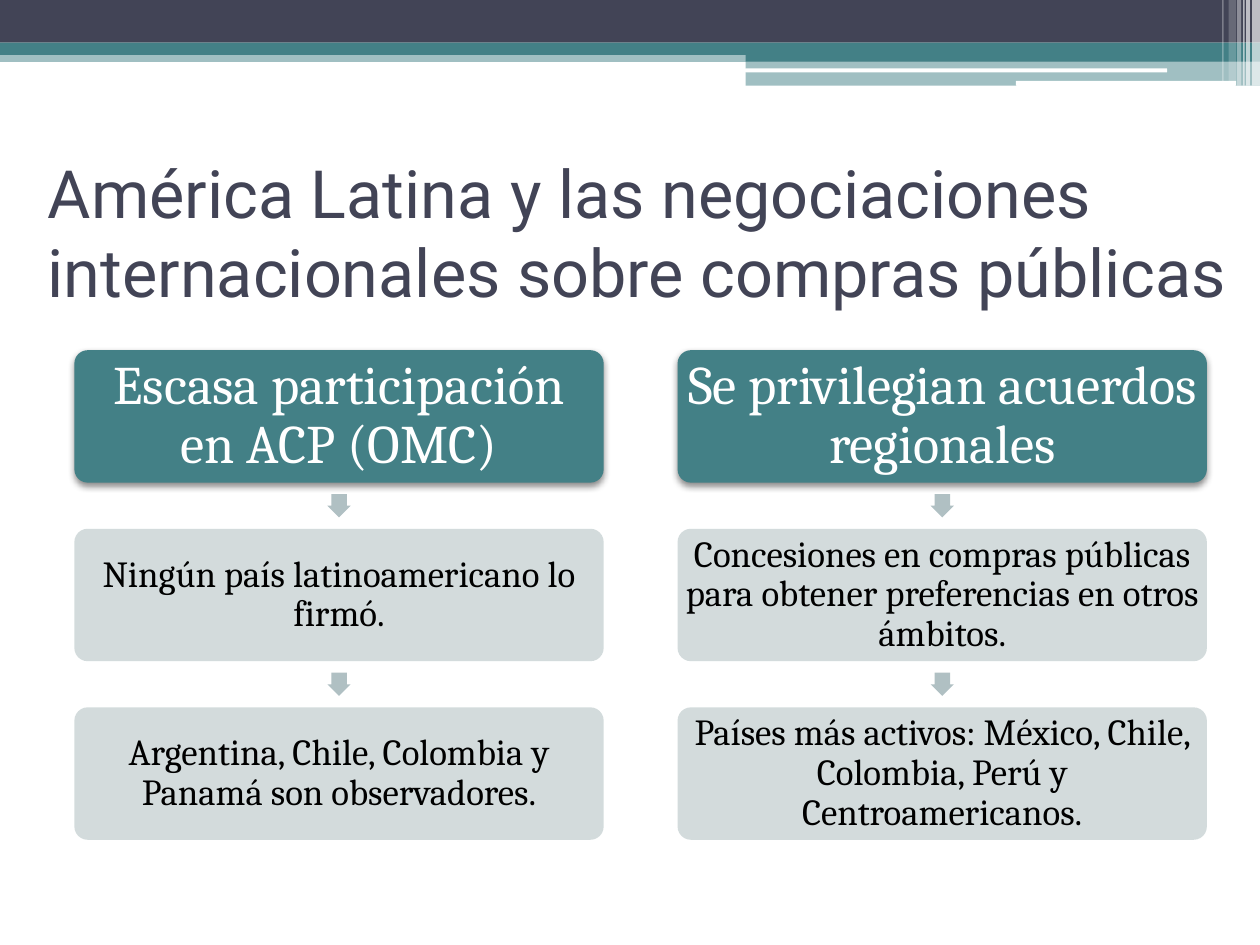
import pptx
import pptx.dml.color
import pptx.enum.shapes
import pptx.enum.text
import pptx.oxml
import pptx.oxml.ns
import pptx.util
from pptx.util import Cm

RGBColor = pptx.dml.color.RGBColor
Shape = pptx.enum.shapes.MSO_SHAPE
Align = pptx.enum.text.PP_ALIGN

NAVY = RGBColor(0x42, 0x44, 0x56)
TEAL = RGBColor(0x43, 0x80, 0x86)
ARROW_GREY = RGBColor(0xB0, 0xC0, 0xC3)
PALE_GREY = RGBColor(0xCF, 0xD8, 0xD9)
WHITE = RGBColor(0xFF, 0xFF, 0xFF)
BLACK = RGBColor(0, 0, 0)

# left, top, width, height in cm, colour, opacity in percent
BANDS = [
    (0, 1.02, 25.4, 0.23, TEAL, 50),
    (0, 0, 25.4, 0.86, NAVY, 100),
    (0, 0.86, 25.4, 0.25, TEAL, 100),
    (15.03, 0.99, 10.37, 0.25, TEAL, 100),
    (15.03, 1.23, 10.37, 0.5, TEAL, 50),
]
HIGHLIGHTS = [(15.02, 1.38, 8.51, 0.08), (20.48, 1.63, 4.44, 0.1)]
# left, width, height in cm, opacity in percent
STRIPES = [
    (25.24, 0.16, 1.73, 65),
    (25.12, 0.08, 1.73, 65),
    (25.06, 0.03, 1.73, 60),
    (24.94, 0.08, 1.73, 40),
    (24.77, 0.15, 1.63, 20),
    (24.64, 0.03, 1.63, 30),
]

COLUMNS = [
    ("Escasa participación en ACP (OMC)",
     "Ningún país latinoamericano lo firmó.",
     "Argentina, Chile, Colombia y Panamá son observadores."),
    ("Se privilegian acuerdos regionales",
     "Concesiones en compras públicas para obtener preferencias en otros ámbitos.",
     "Países más activos: México, Chile, Colombia, Perú y Centroamericanos."),
]
LEFT, TOP = 1.5, 7.06
COLUMN_PITCH, ROW_PITCH = 12.16, 3.6
BOX_WIDTH, BOX_HEIGHT = 10.67, 2.67
ARROW_SIZE = 0.47


def write(frame, text, size, color, font="Cambria", align=Align.CENTER,
          inset=None, line_spacing=None):
    frame.word_wrap = True
    frame.auto_size = pptx.enum.text.MSO_AUTO_SIZE.NONE
    frame.vertical_anchor = pptx.enum.text.MSO_ANCHOR.MIDDLE
    if inset is not None:
        frame.margin_left = frame.margin_right = Cm(inset)
        frame.margin_top = frame.margin_bottom = Cm(inset)
    paragraph = frame.paragraphs[0]
    paragraph.alignment = align
    if line_spacing:
        paragraph.line_spacing = line_spacing
    run = paragraph.add_run()
    run.text = text
    run.font.name = font
    run.font.size = pptx.util.Pt(size)
    run.font.color.rgb = color


class SlideBuilder:
    def __init__(self, slide):
        self.slide = slide

    def title(self, text):
        heading = self.slide.shapes.title
        heading.left, heading.top = Cm(0.71), Cm(3.18)
        heading.width, heading.height = Cm(24.69), Cm(2.97)
        write(heading.text_frame, text, 38, NAVY, font="Roboto", align=Align.LEFT)

    def block(self, left, top, width, height, color, opacity=100,
              kind=Shape.RECTANGLE, adjustments=()):
        block = self.slide.shapes.add_shape(
            kind, Cm(left), Cm(top), Cm(width), Cm(height))
        block.shadow.inherit = False
        block.line.fill.background()
        block.fill.solid()
        block.fill.fore_color.rgb = color
        if opacity < 100:
            tint = block.fill._xPr.find(".//" + pptx.oxml.ns.qn("a:srgbClr"))
            tint.append(pptx.oxml.parse_xml(
                f'<a:alpha {pptx.oxml.ns.nsdecls("a")} val="{opacity * 1000}"/>'))
        for index, value in enumerate(adjustments):
            block.adjustments[index] = value
        return block

    def card(self, left, top, text, heading):
        card = self.block(left, top, BOX_WIDTH, BOX_HEIGHT,
                          TEAL if heading else PALE_GREY,
                          100 if heading else 90,
                          Shape.ROUNDED_RECTANGLE, [0.1])
        if heading:
            self.drop_shadow(card)
        write(card.text_frame, text, 31 if heading else 21,
              WHITE if heading else BLACK,
              inset=0.1 if heading else 0.08, line_spacing=0.9)

    def drop_shadow(self, card):
        effects = card._element.spPr.find(pptx.oxml.ns.qn("a:effectLst"))
        effects.append(pptx.oxml.parse_xml(
            f'<a:outerShdw {pptx.oxml.ns.nsdecls("a")} blurRad="50800" '
            'dist="25400" dir="5400000" rotWithShape="0">'
            '<a:srgbClr val="000000"><a:alpha val="45000"/></a:srgbClr>'
            '</a:outerShdw>'))

    def down_arrow(self, left, top):
        arrow = self.block(left, top, ARROW_SIZE, ARROW_SIZE, ARROW_GREY,
                           kind=Shape.RIGHT_ARROW, adjustments=[0.667, 0.5])
        arrow.rotation = 90

    def column(self, left, texts):
        """Stack a heading and its points, with an arrow centred in each gap."""
        gap = ROW_PITCH - BOX_HEIGHT
        for row, text in enumerate(texts):
            top = TOP + row * ROW_PITCH
            if row:
                self.down_arrow(left + (BOX_WIDTH - ARROW_SIZE) / 2,
                                top - (gap + ARROW_SIZE) / 2)
            self.card(left, top, text, heading=row == 0)


def main():
    deck = pptx.Presentation()
    deck.slide_width, deck.slide_height = Cm(25.4), Cm(19.05)
    builder = SlideBuilder(deck.slides.add_slide(deck.slide_layouts[5]))

    for band in BANDS:
        builder.block(*band)
    for highlight in HIGHLIGHTS:
        builder.block(*highlight, WHITE, kind=Shape.ROUNDED_RECTANGLE,
                      adjustments=[0.167])
    for left, width, height, opacity in STRIPES:
        builder.block(left, 0, width, height, WHITE, opacity)

    builder.title("América Latina y las negociaciones internacionales "
                  "sobre compras públicas")
    for index, texts in enumerate(COLUMNS):
        builder.column(LEFT + index * COLUMN_PITCH, texts)

    deck.save("out.pptx")


if __name__ == "__main__":
    main()
